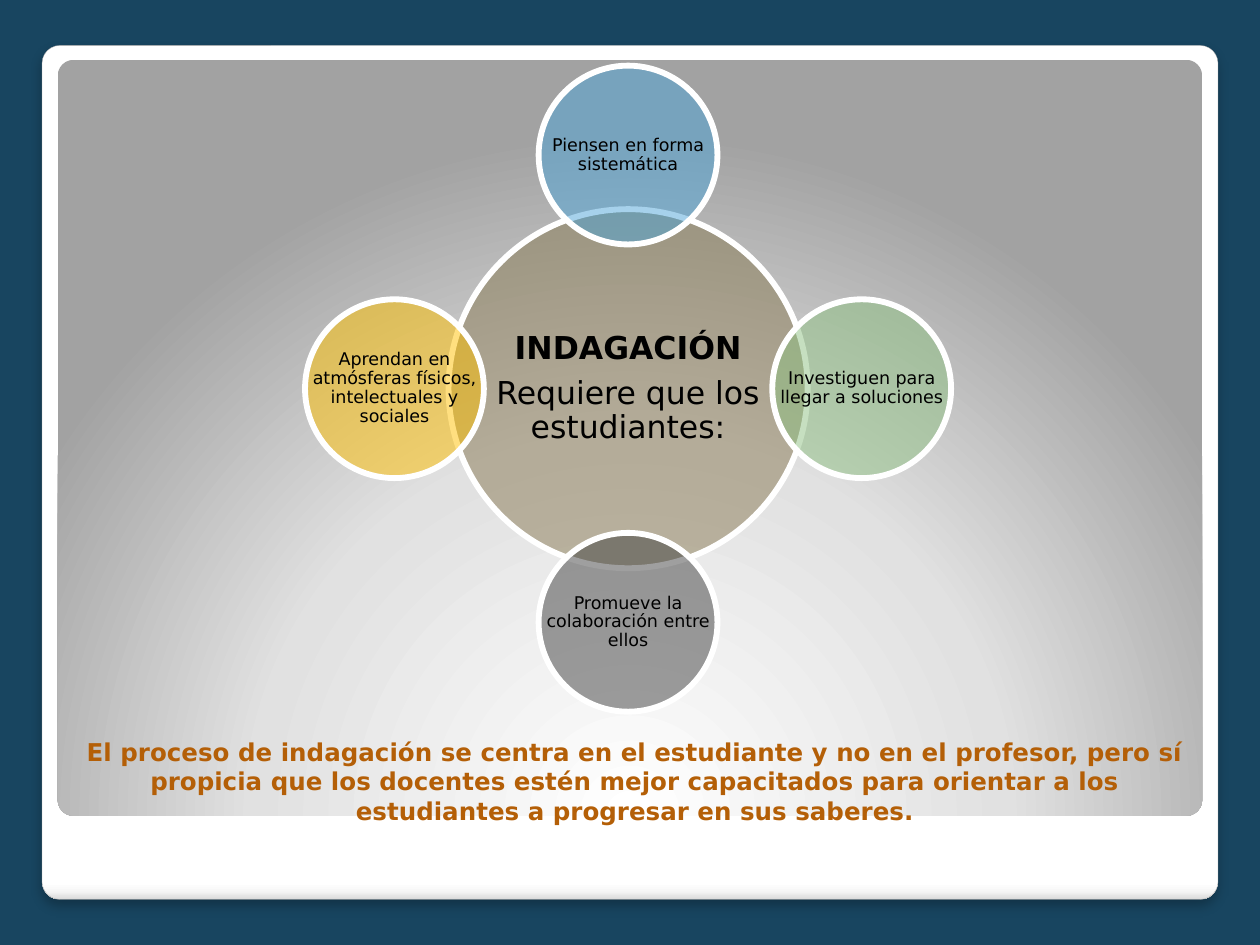
from lxml import etree
from pptx import Presentation
from pptx.dml.color import RGBColor
from pptx.enum.shapes import MSO_SHAPE
from pptx.enum.text import MSO_ANCHOR, MSO_AUTO_SIZE, PP_ALIGN
from pptx.oxml.ns import qn
from pptx.util import Pt

ROUND = MSO_SHAPE.ROUNDED_RECTANGLE
OVAL = MSO_SHAPE.OVAL
MIDDLE = MSO_ANCHOR.MIDDLE
GROW = MSO_AUTO_SIZE.SHAPE_TO_FIT_TEXT
CENTER = PP_ALIGN.CENTER
FONT = "DejaVu Sans"
MID_X, MID_Y = 358.9, 222.1
HUB, NODE, REACH = 205.2, 102.2, 133.5
NODES = [
    (0, -1, "4EA5D8", "Piensen en forma sistemática"),
    (1, 0, "8EC182", "Investiguen para llegar a soluciones"),
    (0, 1, "404040", "Promueve la colaboración entre ellos"),
    (-1, 0, "FFC000",
     "Aprendan en atmósferas físicos, intelectuales y sociales"),
]


def color(text):
    return RGBColor.from_string(text)


def add(parent, tag, **attrs):
    values = {key: str(val) for key, val in attrs.items()}
    return etree.SubElement(parent, qn(tag), values)


def tint(parent, text, alpha=None):
    node = add(parent, "a:srgbClr", val=text)
    if alpha is not None:
        add(node, "a:alpha", val=alpha * 1000)


def blend(shape, stops, focus=None):
    shape.fill.background()
    props = shape.element.spPr
    grad = etree.Element(qn("a:gradFill"), rotWithShape="1")
    props.replace(props.find(qn("a:noFill")), grad)
    items = add(grad, "a:gsLst")
    for pos, text in stops:
        tint(add(items, "a:gs", pos=pos * 1000), text)
    if focus:
        route = add(grad, "a:path", path="circle")
        sides = {key: val * 1000 for key, val in zip("ltrb", focus)}
        add(route, "a:fillToRect", **sides)
    else:
        add(grad, "a:lin", ang=90 * 60000, scaled=0)


def panel(slide, left, top, width, height, stops, focus=None):
    shape = slide.shapes.add_shape(
        ROUND, Pt(left), Pt(top), Pt(width), Pt(height))
    shape.adjustments[0] = 0.021
    shape.shadow.inherit = False
    shape.line.fill.background()
    blend(shape, stops, focus)
    return shape


def shade(shape):
    effects = shape.element.spPr.find(qn("a:effectLst"))
    cast = add(effects, "a:outerShdw", blurRad=Pt(6), dist=Pt(4),
               dir=90 * 60000, algn="t", rotWithShape=0)
    tint(cast, "000000", 25)


def label(shapes, left, top, width, height, lines, size, ink="000000"):
    box = shapes.add_textbox(Pt(left), Pt(top), Pt(width), Pt(height))
    frame = box.text_frame
    frame.word_wrap = True
    frame.text = "\n".join(text for text, bold in lines)
    for para, (text, bold) in zip(frame.paragraphs, lines):
        para.alignment = CENTER
        font = para.runs[0].font
        font.name, font.size, font.bold = FONT, Pt(size), bold
        font.color.rgb = color(ink)
    return frame


def circle(slide, x, y, size, paint, lines, points, inset):
    group = slide.shapes.add_group_shape()
    left, top = x - size / 2, y - size / 2
    disc = group.shapes.add_shape(OVAL, Pt(left), Pt(top), Pt(size), Pt(size))
    disc.shadow.inherit = False
    disc.fill.solid()
    disc.fill.fore_color.rgb = color(paint)
    fill = disc.element.spPr.find(qn("a:solidFill"))
    add(fill[0], "a:alpha", val=50000)
    disc.line.color.rgb = color("FFFFFF")
    disc.line.width = Pt(3.35)
    frame = label(group.shapes, left, top, size, size, lines, points)
    frame.vertical_anchor = MIDDLE
    frame.margin_left = frame.margin_right = Pt(inset)
    frame.margin_top = frame.margin_bottom = Pt(inset)
    for para in frame.paragraphs:
        para.line_spacing = 0.9
        para.space_after = Pt(0.35 * points)


def main():
    deck = Presentation()
    deck.slide_width, deck.slide_height = Pt(720), Pt(540)
    slide = deck.slides.add_slide(deck.slide_layouts[6])
    back = slide.background.fill
    back.solid()
    back.fore_color.rgb = color("184560")

    card = panel(slide, 24, 26, 672, 488, [
        (0, "FFFFFF"), (98, "FFFFFF"), (99, "F7F7F7"), (100, "DADADA")])
    card.line.color.rgb = color("A4A4A4")
    card.line.width = Pt(0.16)
    shade(card)
    panel(slide, 33, 34.2, 654, 432, [
        (0, "FFFFFF"), (55, "E1E1E1"), (100, "A2A2A2")], (50, 175, 50, -75))

    circle(slide, MID_X, MID_Y, HUB, "887952", [
        ("INDAGACIÓN", True), ("Requiere que los estudiantes:", False)],
        18, 2)
    for dx, dy, paint, text in NODES:
        circle(slide, MID_X + dx * REACH, MID_Y + dy * REACH, NODE, paint,
               [(text, False)], 10, 1)

    note = label(slide.shapes, 42.5, 417.6, 640.8, 58.3, [(
        "El proceso de indagación se centra en el estudiante y no en el "
        "profesor, pero sí propicia que los docentes estén mejor capacitados "
        "para orientar a los estudiantes a progresar en sus saberes.", True)],
        14, "B45F07")
    note.auto_size = GROW
    deck.save("out.pptx")


if __name__ == "__main__":
    main()
